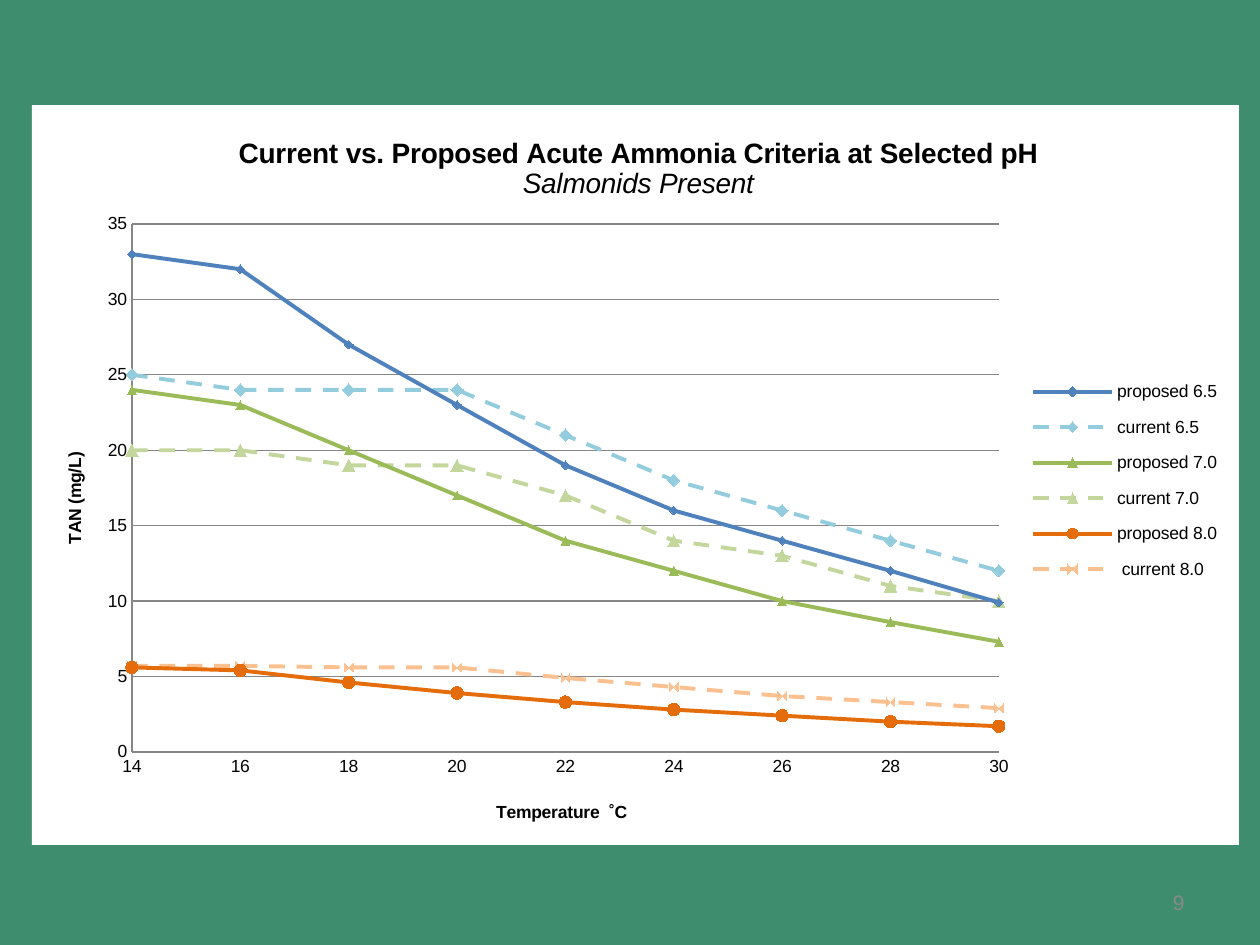
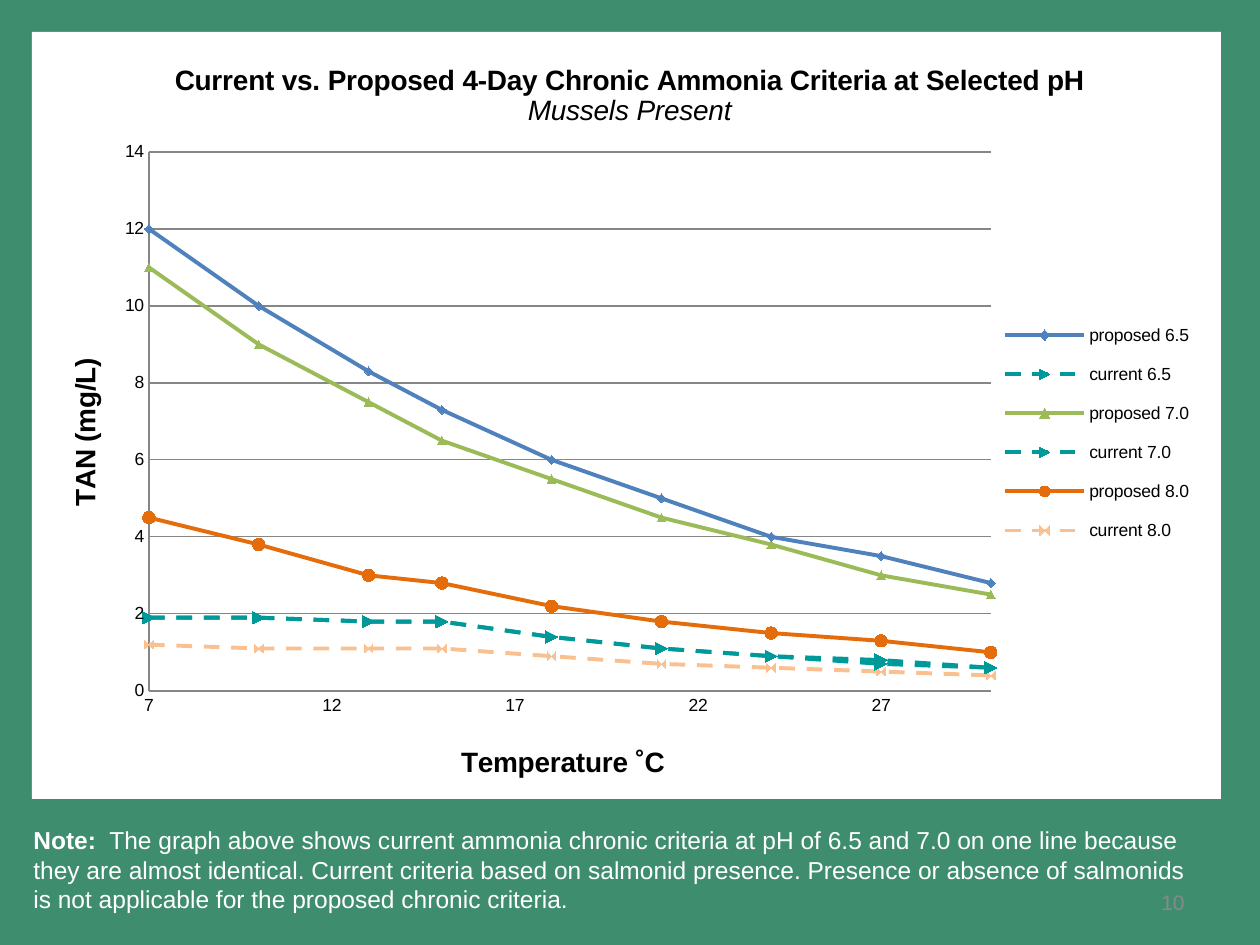
from dataclasses import dataclass

from lxml.etree import SubElement
from pptx import Presentation
from pptx.chart.data import XyChartData
from pptx.dml.color import RGBColor
from pptx.enum.chart import XL_CHART_TYPE, XL_LEGEND_POSITION, XL_MARKER_STYLE, XL_TICK_MARK
from pptx.enum.dml import MSO_LINE
from pptx.enum.text import PP_ALIGN
from pptx.oxml import parse_xml
from pptx.oxml.ns import nsdecls, qn
from pptx.util import Emu, Pt

PIXELS_PER_INCH = 126
FONT = "Arial"
COLORS = {
    "background": "3F8D6F",
    "white": "FFFFFF",
    "black": "000000",
    "axis": "868686",
    "number": "898989",
    "blue": "4F81BD",
    "light blue": "93CDDD",
    "green": "9BBB59",
    "light green": "C3D69B",
    "orange": "E46C0A",
    "light orange": "FAC090",
    "teal": "009999",
}


@dataclass(frozen=True)
class Box:
    """A rectangle in px."""

    left: int
    top: int
    width: int = 0
    height: int = 0


@dataclass(frozen=True)
class Curve:
    """The look of one series."""

    color: str
    marker: XL_MARKER_STYLE
    marker_size: int
    dashed: bool = False


@dataclass(frozen=True)
class Criteria:
    """One chart of ammonia criteria, with its places in slide px."""

    heading: str
    condition: str
    temperature_label: str
    axis_title_size: int
    temperatures: tuple[int, ...]
    temperature_step: int
    tan_maximum: int
    tan_step: int
    series: dict[str, tuple[Curve, tuple[float, ...]]]
    frame: Box
    plot: Box
    legend: Box
    title_places: tuple[Box, Box, Box]


PROPOSED_65 = Curve("blue", XL_MARKER_STYLE.DIAMOND, 5)
PROPOSED_70 = Curve("green", XL_MARKER_STYLE.TRIANGLE, 5)
PROPOSED_80 = Curve("orange", XL_MARKER_STYLE.CIRCLE, 7)
CURRENT_65 = Curve("light blue", XL_MARKER_STYLE.DIAMOND, 7, True)
CURRENT_70 = Curve("light green", XL_MARKER_STYLE.TRIANGLE, 7, True)
CURRENT_80 = Curve("light orange", XL_MARKER_STYLE.AUTOMATIC, 5, True)
CURRENT_SHARED = Curve("teal", XL_MARKER_STYLE.DOT, 7, True)

ACUTE = Criteria(
    heading="Current vs. Proposed Acute Ammonia Criteria at Selected pH",
    condition="Salmonids Present",
    temperature_label="Temperature  ˚C",
    axis_title_size=10,
    temperatures=tuple(range(14, 31, 2)),
    temperature_step=2,
    tan_maximum=35,
    tan_step=5,
    series={
        "proposed 6.5": (PROPOSED_65, (33, 32, 27, 23, 19, 16, 14, 12, 9.9)),
        "current 6.5": (CURRENT_65, (25, 24, 24, 24, 21, 18, 16, 14, 12)),
        "proposed 7.0": (PROPOSED_70, (24, 23, 20, 17, 14, 12, 10, 8.6, 7.3)),
        "current 7.0": (CURRENT_70, (20, 20, 19, 19, 17, 14, 13, 11, 10)),
        "proposed 8.0": (PROPOSED_80, (5.6, 5.4, 4.6, 3.9, 3.3, 2.8, 2.4, 2, 1.7)),
        " current 8.0": (CURRENT_80, (5.7, 5.7, 5.6, 5.6, 4.9, 4.3, 3.7, 3.3, 2.9)),
    },
    frame=Box(32, 105, 1207, 740),
    plot=Box(132, 224, 867, 528),
    legend=Box(1025, 366, 200, 229),
    title_places=(Box(235, 132), Box(493, 797), Box(60, 449)),
)
CHRONIC = Criteria(
    heading="Current vs. Proposed 4-Day Chronic Ammonia Criteria at Selected pH",
    condition="Mussels Present",
    temperature_label="Temperature ˚C",
    axis_title_size=16,
    temperatures=(7, 10, 13, 15, 18, 21, 24, 27, 30),
    temperature_step=5,
    tan_maximum=14,
    tan_step=2,
    series={
        "proposed 6.5": (PROPOSED_65, (12, 10, 8.3, 7.3, 6, 5, 4, 3.5, 2.8)),
        "current 6.5": (CURRENT_SHARED, (1.9, 1.9, 1.8, 1.8, 1.4, 1.1, 0.9, 0.7, 0.6)),
        "proposed 7.0": (PROPOSED_70, (11, 9, 7.5, 6.5, 5.5, 4.5, 3.8, 3, 2.5)),
        "current 7.0": (CURRENT_SHARED, (1.9, 1.9, 1.8, 1.8, 1.4, 1.1, 0.9, 0.8, 0.6)),
        "proposed 8.0": (PROPOSED_80, (4.5, 3.8, 3, 2.8, 2.2, 1.8, 1.5, 1.3, 1)),
        "current 8.0": (CURRENT_80, (1.2, 1.1, 1.1, 1.1, 0.9, 0.7, 0.6, 0.5, 0.4)),
    },
    frame=Box(32, 32, 1189, 767),
    plot=Box(149, 152, 842, 539),
    legend=Box(999, 306, 196, 254),
    title_places=(Box(171, 59), Box(456, 739), Box(62, 353)),
)
NOTE = (
    "  The graph above shows current ammonia chronic criteria at pH of 6.5 and 7.0 on one line "
    "because they are almost identical. Current criteria based on salmonid presence. Presence or "
    "absence of salmonids is not applicable for the proposed chronic criteria."
)


def px(length: int) -> Emu:
    """Turn px into EMU."""
    return Emu(round(length * 914400 / PIXELS_PER_INCH))


def bounds(box: Box) -> tuple[Emu, Emu, Emu, Emu]:
    """Return a box as left, top, width and height in EMU."""
    return px(box.left), px(box.top), px(box.width), px(box.height)


def rgb(name: str) -> RGBColor:
    """Look up a colour by name."""
    return RGBColor.from_string(COLORS[name])


def add_text(paragraph, text: str, *, size: int, color: str = "black",
             bold: bool = False, italic: bool = False) -> None:
    """Add a formatted run to a paragraph."""
    run = paragraph.add_run()
    run.text = text
    font = run.font
    font.name, font.size = FONT, Pt(size)
    font.bold, font.italic = bold, italic
    font.color.rgb = rgb(color)


def add_text_box(slide, box: Box):
    """Add a wrapping text box and return its first paragraph."""
    frame = slide.shapes.add_textbox(*bounds(box)).text_frame
    frame.word_wrap = True
    return frame.paragraphs[0]


def place(element, index: int, box: Box, frame: Box, inner: bool = False) -> None:
    """Give a chart part a manual layout inside the chart frame."""
    for previous in element.findall(qn("c:layout")):
        element.remove(previous)
    layout = parse_xml(f'<c:layout {nsdecls("c")}><c:manualLayout/></c:layout>')
    settings = {"layoutTarget": "inner"} if inner else {}
    settings |= {"xMode": "edge", "yMode": "edge"}
    settings["x"] = (box.left - frame.left) / frame.width
    settings["y"] = (box.top - frame.top) / frame.height
    if box.width:
        settings["w"] = box.width / frame.width
        settings["h"] = box.height / frame.height
    for name, value in settings.items():
        SubElement(layout[0], qn(f"c:{name}")).set("val", str(value))
    element.insert(index, layout)


def style_line(line, color: str, width: float) -> None:
    """Set the colour and width of a line."""
    line.color.rgb = rgb(color)
    line.width = Pt(width)


def style_axis(axis, title: str, title_size: int, limits: tuple[int, int], step: int) -> None:
    """Set the scale, line, labels and title of an axis."""
    axis.minimum_scale, axis.maximum_scale = limits
    axis.major_unit = step
    axis.major_tick_mark = axis.minor_tick_mark = XL_TICK_MARK.NONE
    axis.tick_labels.font.size = Pt(10)
    style_line(axis.format.line, "axis", 0.75)
    add_text(axis.axis_title.text_frame.paragraphs[0], title, size=title_size, bold=True)


def style_series(series, curve: Curve) -> None:
    """Draw a series with its line and markers."""
    series.smooth = False
    style_line(series.format.line, curve.color, 2.25)
    if curve.dashed:
        series.format.line.dash_style = MSO_LINE.DASH
    marker = series.marker
    marker.style, marker.size = curve.marker, curve.marker_size
    marker.format.fill.solid()
    marker.format.fill.fore_color.rgb = rgb(curve.color)
    style_line(marker.format.line, curve.color, 0.75)


def add_criteria_chart(slide, criteria: Criteria) -> None:
    """Add a scatter chart of current and proposed criteria."""
    data = XyChartData()
    for name, (_, values) in criteria.series.items():
        points = data.add_series(name)
        for temperature, value in zip(criteria.temperatures, values):
            points.add_data_point(temperature, value)
    chart = slide.shapes.add_chart(
        XL_CHART_TYPE.XY_SCATTER_LINES, *bounds(criteria.frame), data).chart
    chart.font.name, chart.font.size = FONT, Pt(10)
    chart.font.color.rgb = rgb("black")

    chart.has_title = True
    title = chart.chart_title.text_frame
    add_text(title.paragraphs[0], criteria.heading, size=16, bold=True)
    add_text(title.add_paragraph(), criteria.condition, size=16, italic=True)

    temperatures = criteria.temperatures
    style_axis(chart.category_axis, criteria.temperature_label, criteria.axis_title_size,
               (temperatures[0], temperatures[-1]), criteria.temperature_step)
    style_axis(chart.value_axis, "TAN (mg/L)", criteria.axis_title_size,
               (0, criteria.tan_maximum), criteria.tan_step)
    chart.category_axis.has_major_gridlines = False
    chart.value_axis.has_major_gridlines = True
    style_line(chart.value_axis.major_gridlines.format.line, "axis", 0.75)

    chart.plots[0].vary_by_categories = False
    for series, (curve, _) in zip(chart.plots[0].series, criteria.series.values()):
        style_series(series, curve)

    chart.has_legend = True
    chart.legend.position = XL_LEGEND_POSITION.RIGHT
    chart.legend.include_in_layout = False
    chart.legend.font.size = Pt(10)

    body = chart.element.find(qn("c:chart"))
    body.addnext(parse_xml(
        f'<c:spPr {nsdecls("c", "a")}><a:solidFill><a:srgbClr val="{COLORS["white"]}"/>'
        "</a:solidFill><a:ln><a:noFill/></a:ln></c:spPr>"))
    place(body.find(qn("c:plotArea")), 0, criteria.plot, criteria.frame, inner=True)
    place(body.find(qn("c:legend")), 1, criteria.legend, criteria.frame)
    titles = list(body.iter(qn("c:title")))
    for element, box in zip(titles, criteria.title_places):
        place(element, 1, box, criteria.frame)
    direction = next(titles[-1].iter(qn("a:bodyPr")))
    direction.set("rot", "-5400000")
    direction.set("vert", "horz")


def add_criteria_slide(presentation, criteria: Criteria, number: int, note: str = "") -> None:
    """Add a slide with a chart, an optional note and the slide number."""
    slide = presentation.slides.add_slide(presentation.slide_layouts[6])
    slide.background.fill.solid()
    slide.background.fill.fore_color.rgb = rgb("background")
    if note:
        paragraph = add_text_box(slide, Box(21, 819, 1198, 102))
        add_text(paragraph, "Note:", size=14, color="white", bold=True)
        add_text(paragraph, note, size=14, color="white")
    add_criteria_chart(slide, criteria)
    paragraph = add_text_box(slide, Box(903, 883, 294, 38))
    paragraph.alignment = PP_ALIGN.RIGHT
    add_text(paragraph, str(number), size=12, color="number")


def main() -> None:
    """Build both slides and save the presentation."""
    presentation = Presentation()
    presentation.slide_width, presentation.slide_height = px(1260), px(945)
    add_criteria_slide(presentation, ACUTE, 9)
    add_criteria_slide(presentation, CHRONIC, 10, NOTE)
    presentation.save("out.pptx")


if __name__ == "__main__":
    main()
